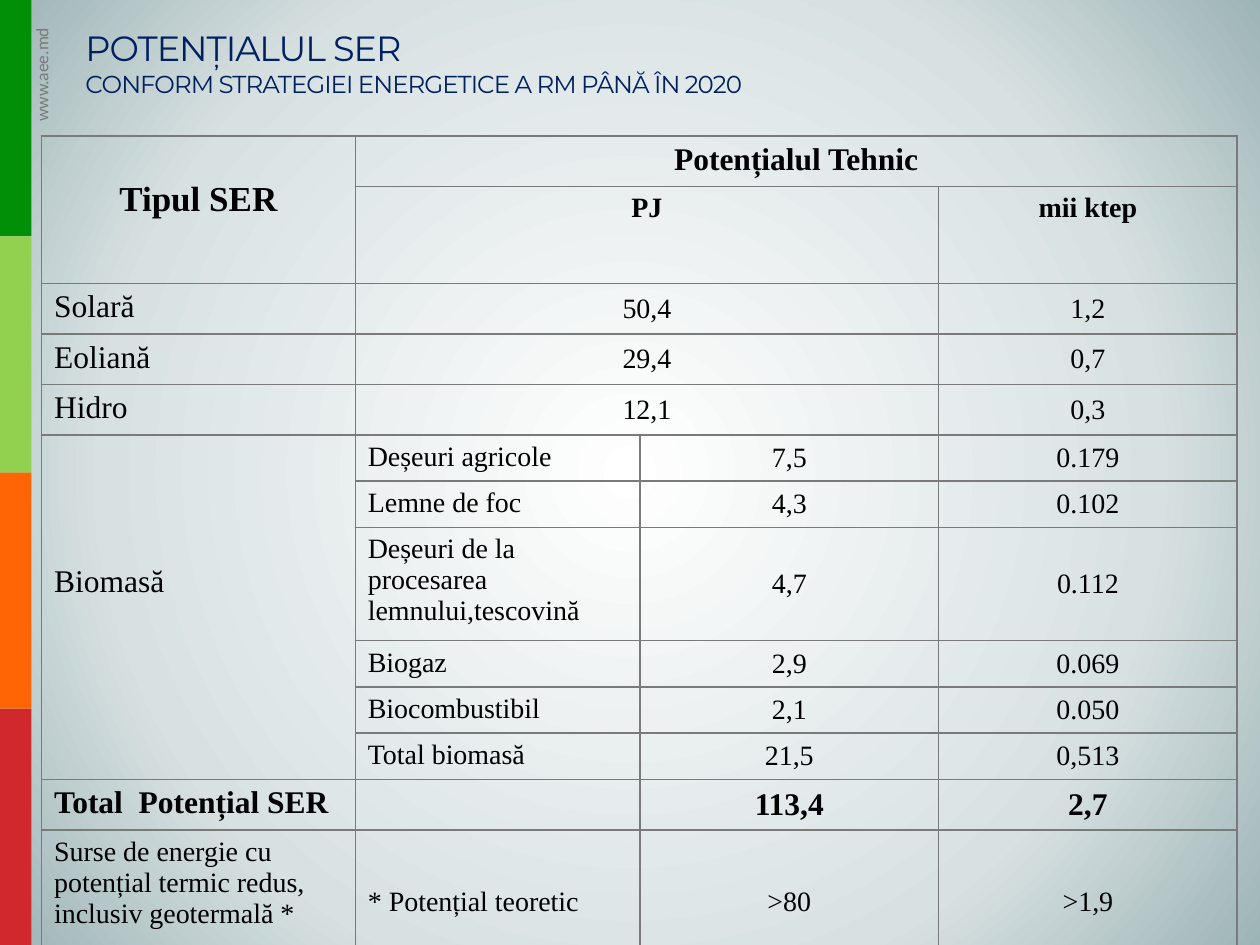
from dataclasses import dataclass

from lxml.etree import SubElement
from pptx import Presentation
from pptx.dml.color import RGBColor
from pptx.enum.shapes import MSO_SHAPE
from pptx.enum.text import MSO_ANCHOR, PP_ALIGN
from pptx.oxml import parse_xml
from pptx.oxml.ns import nsdecls, qn
from pptx.util import Inches, Pt


@dataclass(frozen=True)
class Theme:
    stripes: tuple = ("018F08", "92D050", "FF6405", "D1282E")
    backdrop: tuple = ((0, "FFFFFF"), (67, "D8E1E2"), (100, "9DB4B5"))
    title: str = "002060"
    ink: str = "000000"
    gray: str = "7A7A7A"
    title_font: str = "Montserrat"
    table_font: str = "Times New Roman"
    site_font: str = "Calibri"
    heading: int = 20
    label: int = 18
    body: int = 16
    subtitle: int = 14
    site: int = 10


COLUMNS, ROWS = 100, 75
HEADER_ROWS, TOTAL_ROW, LAST_ROW = 2, 11, 12
COLUMN_WIDTHS = (24.9, 22.6, 23.7, 23.7)
ROW_HEIGHTS = (4, 7.7, 4, 4, 4, 3.65, 3.65, 9, 3.65, 3.65, 3.65, 4, 11.5)
MERGES = ((0, 0, 1, 0), (0, 1, 0, 3), (1, 1, 1, 2), (2, 1, 2, 2),
          (3, 1, 3, 2), (4, 1, 4, 2), (5, 0, 10, 0))
DATA = (
    ("Tipul SER", "Potențialul Tehnic", "", ""),
    ("", "PJ", "", "mii ktep"),
    ("Solară", "50,4", "", "1,2"),
    ("Eoliană", "29,4", "", "0,7"),
    ("Hidro", "12,1", "", "0,3"),
    ("Biomasă", "Deșeuri agricole", "7,5", "0.179"),
    ("", "Lemne de foc", "4,3", "0.102"),
    ("", "Deșeuri de la procesarea lemnului,tescovină", "4,7", "0.112"),
    ("", "Biogaz", "2,9", "0.069"),
    ("", "Biocombustibil", "2,1", "0.050"),
    ("", "Total biomasă", "21,5", "0,513"),
    ("Total  Potențial SER", "", "113,4", "2,7"),
    ("Surse de energie cu potențial termic redus, inclusiv geotermală *",
     "* Potențial teoretic", ">80", ">1,9"),
)
SIZES = {(0, 0): "heading", (0, 1): "label", (LAST_ROW, 0): "body"}
TOP_MARGINS = {(0, 0): 3.5, (5, 0): 10.3}


class SlideBuilder:
    def __init__(self, deck, theme):
        self.theme = theme
        self.unit_x = deck.slide_width / COLUMNS
        self.unit_y = deck.slide_height / ROWS
        self.page = deck.slides.add_slide(deck.slide_layouts[6])

    def across(self, columns):
        return round(columns * self.unit_x)

    def down(self, rows):
        return round(rows * self.unit_y)

    def frame(self, left, top, width, height):
        return self.across(left), self.down(top), self.across(width), self.down(height)

    def backdrop(self):
        fill = self.page.background.fill
        fill.gradient()
        stops = "".join(
            f'<a:gs pos="{share * 1000}"><a:srgbClr val="{color}"/></a:gs>'
            for share, color in self.theme.backdrop)
        gradient = parse_xml(
            f'<a:gradFill {nsdecls("a")} rotWithShape="1"><a:gsLst>{stops}</a:gsLst>'
            '<a:path path="circle"><a:fillToRect l="50000" t="50000" r="50000" b="50000"/>'
            '</a:path></a:gradFill>')
        old = next(self.page.background._cSld.iter(qn("a:gradFill")))
        old.getparent().replace(old, gradient)

    def stripe(self, color, *place):
        bar = self.page.shapes.add_shape(MSO_SHAPE.RECTANGLE, *self.frame(*place))
        bar.shadow.inherit = False
        bar.fill.solid()
        bar.fill.fore_color.rgb = RGBColor.from_string(color)
        bar.line.fill.background()

    def style(self, para, font, size, color, bold=False):
        para.font.name = font
        para.font.size = Pt(size)
        para.font.bold = bold
        para.font.color.rgb = RGBColor.from_string(color)

    def text(self, lines, font, color, place, wrap=True, rotation=0, spacing=0):
        box = self.page.shapes.add_textbox(*self.frame(*place))
        box.rotation = rotation
        box.text_frame.word_wrap = wrap
        box.text_frame.vertical_anchor = MSO_ANCHOR.BOTTOM if wrap else MSO_ANCHOR.TOP
        box.text_frame.text = "\n".join(words for words, size in lines)
        for para, (words, size) in zip(box.text_frame.paragraphs, lines):
            self.style(para, font, size, color)
            if spacing:
                for span in para.runs:
                    span._r.get_or_add_rPr().set("spc", str(spacing))

    def border(self, cell):
        properties = cell._tc.get_or_add_tcPr()
        for index, side in enumerate(("lnL", "lnR", "lnT", "lnB")):
            line = SubElement(properties, qn(f"a:{side}"), w=str(Pt(1)))
            fill = SubElement(line, qn("a:solidFill"))
            SubElement(fill, qn("a:srgbClr"), val=self.theme.gray)
            properties.insert(index, line)

    def cell(self, cell, words, row, column):
        header = row < HEADER_ROWS
        number = column > 1 or words[:1].isdigit()
        size = SIZES.get((row, column))
        if size is None:
            size = "label" if row == TOTAL_ROW or (column == 0 and words) else "body"
        cell.fill.background()
        self.border(cell)
        middle = not header and (number or (row == LAST_ROW and column == 1))
        cell.vertical_anchor = MSO_ANCHOR.MIDDLE if middle else MSO_ANCHOR.TOP
        if (row, column) in TOP_MARGINS:
            cell.margin_top = self.down(TOP_MARGINS[row, column])
        cell.text = words
        para = cell.text_frame.paragraphs[0]
        para.alignment = PP_ALIGN.CENTER if header or number else PP_ALIGN.LEFT
        self.style(para, self.theme.table_font, getattr(self.theme, size),
                   self.theme.ink, header or row == TOTAL_ROW)

    def table(self, left, top):
        place = self.frame(left, top, sum(COLUMN_WIDTHS), sum(ROW_HEIGHTS))
        table = self.page.shapes.add_table(len(DATA), len(COLUMN_WIDTHS), *place).table
        table.first_row = table.horz_banding = False
        for column, width in zip(table.columns, COLUMN_WIDTHS):
            column.width = self.across(width)
        for row, height in zip(table.rows, ROW_HEIGHTS):
            row.height = self.down(height)
        for row, values in enumerate(DATA):
            for column, words in enumerate(values):
                self.cell(table.cell(row, column), words, row, column)
        for first_row, first_column, last_row, last_column in MERGES:
            table.cell(first_row, first_column).merge(table.cell(last_row, last_column))


def main():
    deck = Presentation()
    deck.slide_width, deck.slide_height = Inches(10), Inches(7.5)
    theme = Theme()
    builder = SlideBuilder(deck, theme)
    builder.backdrop()
    stripe_height = ROWS / len(theme.stripes)
    for index, color in enumerate(theme.stripes):
        builder.stripe(color, 0, index * stripe_height, 2.5, stripe_height)
    builder.text([("www.aee.md", theme.site)], theme.site_font, theme.gray,
                 (-1.6, 4.4, 9.8, 2.7), wrap=False, rotation=270)
    builder.text([("POTENȚIALUL SER", theme.heading),
                  ("CONFORM STRATEGIEI ENERGETICE A RM PÂNĂ ÎN 2020", theme.subtitle)],
                 theme.title_font, theme.title, (5.8, 1.6, 74.2, 6.7), spacing=-60)
    builder.table(3.3, 10.8)
    deck.save("out.pptx")


if __name__ == "__main__":
    main()
